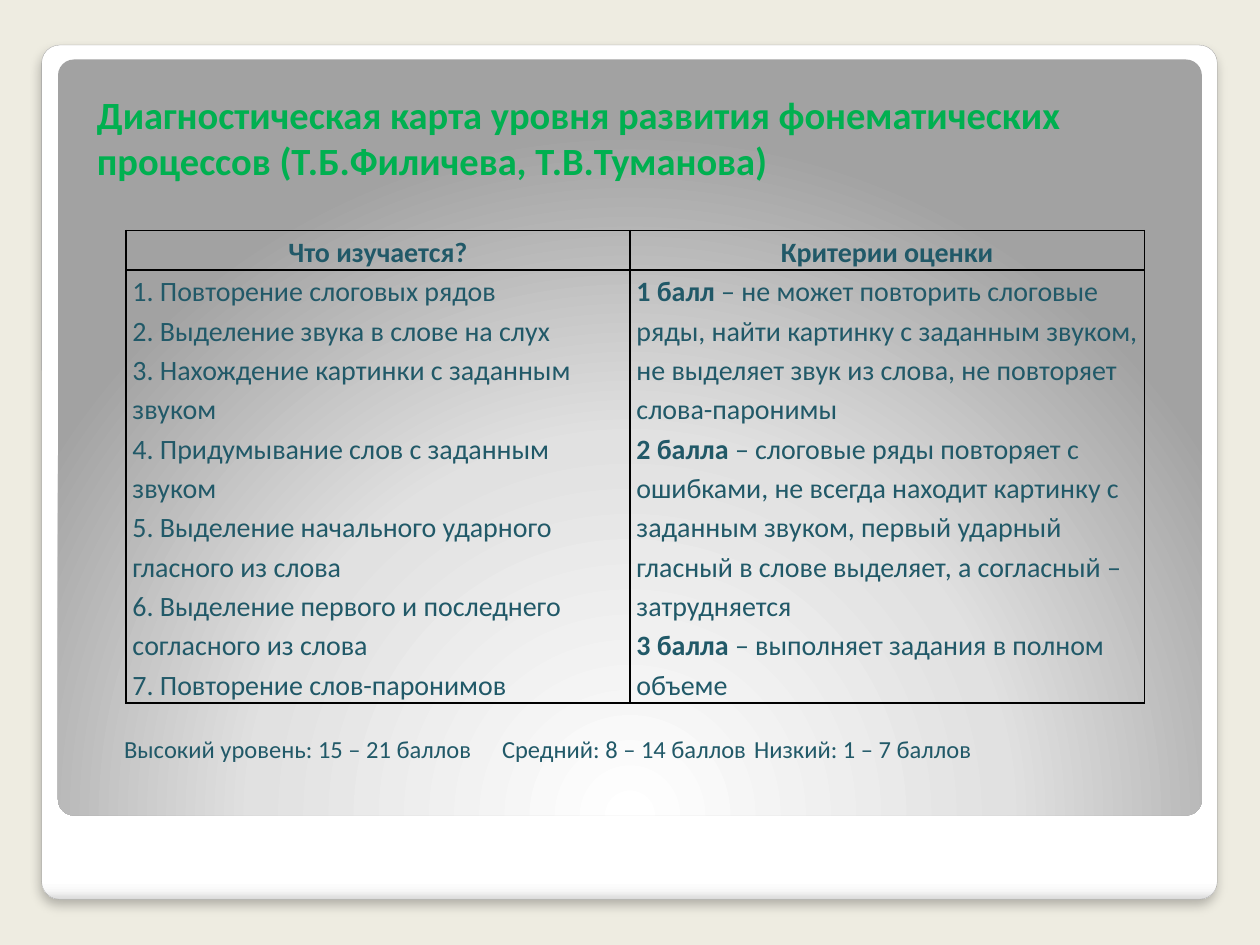
"""Build the slide with the diagnostic card of phonemic processes."""
from dataclasses import dataclass
from typing import Optional

from lxml.etree import SubElement
from pptx import Presentation
from pptx.dml.color import RGBColor
from pptx.enum.shapes import MSO_SHAPE
from pptx.enum.text import MSO_ANCHOR, MSO_AUTO_SIZE, PP_ALIGN
from pptx.oxml import parse_xml
from pptx.oxml.ns import nsdecls, qn
from pptx.util import Cm, Pt

FONT = "Calibri"
TEAL = "215968"
GREEN = "00B050"


@dataclass(frozen=True)
class Box:
    left: float
    top: float
    width: float
    height: float

    def lengths(self) -> tuple:
        return Cm(self.left), Cm(self.top), Cm(self.width), Cm(self.height)


@dataclass(frozen=True)
class Panel:
    box: Box
    stops: tuple
    direction: str
    line: Optional[str] = None
    shadow: bool = False


@dataclass(frozen=True)
class Entry:
    text: str
    lead: str = ""


@dataclass(frozen=True)
class Column:
    heading: str
    width: float
    entries: tuple


PANELS = (
    Panel(Box(0.84, 0.91, 23.7, 17.22),
          ((0, "FFFFFF"), (98, "FFFFFF"), (99, "F7F7F7"), (100, "DADADA")),
          '<a:lin ang="5400000" scaled="0"/>', "A4A4A4", True),
    Panel(Box(1.17, 1.2, 23.06, 15.24),
          ((0, "FFFFFF"), (55, "E1E1E1"), (100, "A2A2A2")),
          '<a:path path="circle"><a:fillToRect l="50000" t="175000" '
          'r="50000" b="-75000"/></a:path>'),
)
TITLE = ("Диагностическая карта уровня развития фонематических процессов "
         "(Т.Б.Филичева, Т.В.Туманова)")
COLUMNS = (
    Column("Что изучается?", 10.16, (
        Entry("1. Повторение слоговых рядов"),
        Entry("2. Выделение звука в слове на слух"),
        Entry("3. Нахождение картинки с заданным звуком"),
        Entry("4. Придумывание слов с заданным звуком"),
        Entry("5. Выделение начального ударного гласного из слова"),
        Entry("6. Выделение первого и последнего согласного из слова"),
        Entry("7. Повторение слов-паронимов"),
    )),
    Column("Критерии оценки", 10.37, (
        Entry(" – не может повторить слоговые ряды, найти картинку с заданным "
              "звуком, не выделяет звук из слова, не повторяет слова-паронимы",
              "1 балл"),
        Entry(" – слоговые ряды повторяет с ошибками, не всегда находит "
              "картинку с заданным звуком, первый ударный гласный в слове "
              "выделяет, а согласный – затрудняется", "2 балла"),
        Entry(" – выполняет задания в полном объеме", "3 балла"),
    )),
)
ROW_HEIGHTS = (0.79, 8.72)
LEVELS = ("Высокий уровень: 15 – 21 баллов", "Средний: 8 – 14 баллов",
          "Низкий: 1 – 7 баллов")
LEVEL_TABS = (9.24, 16.27)


def color(value: str) -> RGBColor:
    return RGBColor.from_string(value)


def format_run(run, size: float, fill: str, bold: bool = False) -> None:
    run.font.name = FONT
    run.font.size = Pt(size)
    run.font.bold = bold
    run.font.color.rgb = color(fill)


def add_panel(slide, panel: Panel, depth: int) -> None:
    shape = slide.shapes.add_shape(MSO_SHAPE.ROUNDED_RECTANGLE, *panel.box.lengths())
    shape.adjustments[0] = 0.021
    shape.shadow.inherit = False
    properties = shape.element.spPr
    stops = "".join(f'<a:gs pos="{position * 1000}"><a:srgbClr val="{value}"/></a:gs>'
                    for position, value in panel.stops)
    properties.insert(2, parse_xml(
        f'<a:gradFill {nsdecls("a")} rotWithShape="1"><a:gsLst>{stops}</a:gsLst>'
        f'{panel.direction}</a:gradFill>'))
    if panel.line:
        shape.line.color.rgb = color(panel.line)
        shape.line.width = Pt(0.16)
    else:
        shape.line.fill.background()
    if panel.shadow:
        properties.find(qn("a:effectLst")).append(parse_xml(
            f'<a:outerShdw {nsdecls("a")} blurRad="{Pt(6)}" dist="{Pt(4)}" dir="5400000" '
            'algn="t" rotWithShape="0"><a:srgbClr val="000000"><a:alpha val="25000"/>'
            '</a:srgbClr></a:outerShdw>'))
    slide.shapes.element.insert(2 + depth, shape.element)


def fill_placeholder(shape, box: Box, text: str, size: float, fill: str, bold: bool):
    shape.left, shape.top, shape.width, shape.height = box.lengths()
    frame = shape.text_frame
    frame.text = text
    frame.word_wrap = True
    frame.auto_size = MSO_AUTO_SIZE.NONE
    frame.vertical_anchor = MSO_ANCHOR.MIDDLE
    paragraph = frame.paragraphs[0]
    paragraph.alignment = PP_ALIGN.LEFT
    paragraph.space_before = Pt(0)
    for run in paragraph.runs:
        format_run(run, size, fill, bold)
    return frame


def add_levels(shape) -> None:
    frame = fill_placeholder(shape, Box(2.5, 14.65, 21, 0.9), "\t".join(LEVELS),
                             14, TEAL, False)
    frame.margin_left = frame.margin_right = 0
    properties = frame.paragraphs[0]._p.get_or_add_pPr()
    properties.set("marL", "0")
    properties.set("indent", "0")
    SubElement(properties, qn("a:buNone"))
    tabs = SubElement(properties, qn("a:tabLst"))
    for position in LEVEL_TABS:
        SubElement(tabs, qn("a:tab"), pos=str(Cm(position)), algn="l")


def fill_cell(cell, entries: tuple, alignment: PP_ALIGN) -> None:
    cell.margin_left = cell.margin_right = Cm(0.13)
    cell.margin_top = cell.margin_bottom = 0
    cell.fill.background()
    properties = cell._tc.get_or_add_tcPr()
    for index, side in enumerate("LRTB"):
        properties.insert(index, parse_xml(
            f'<a:ln{side} {nsdecls("a")} w="{Pt(1)}"><a:solidFill>'
            f'<a:srgbClr val="000000"/></a:solidFill></a:ln{side}>'))
    frame = cell.text_frame
    frame.text = "\n".join(entry.lead or entry.text for entry in entries)
    for paragraph, entry in zip(frame.paragraphs, entries):
        paragraph.alignment = alignment
        paragraph.line_spacing = 1.15
        format_run(paragraph.runs[0], 16, TEAL, bool(entry.lead))
        if entry.lead and entry.text:
            run = paragraph.add_run()
            run.text = entry.text
            format_run(run, 16, TEAL)


def add_criteria_table(slide) -> None:
    box = Box(2.54, 4.65, sum(column.width for column in COLUMNS), sum(ROW_HEIGHTS))
    table = slide.shapes.add_table(2, len(COLUMNS), *box.lengths()).table
    table.horz_banding = False
    for row, height in zip(table.rows, ROW_HEIGHTS):
        row.height = Cm(height)
    for index, column in enumerate(COLUMNS):
        table.columns[index].width = Cm(column.width)
        fill_cell(table.cell(0, index), (Entry("", column.heading),), PP_ALIGN.CENTER)
        fill_cell(table.cell(1, index), column.entries, PP_ALIGN.LEFT)


def main() -> None:
    presentation = Presentation()
    presentation.slide_width, presentation.slide_height = Cm(25.4), Cm(19.05)
    slide = presentation.slides.add_slide(presentation.slide_layouts[1])
    slide.background.fill.solid()
    slide.background.fill.fore_color.rgb = color("EEECE1")
    for depth, panel in enumerate(PANELS):
        add_panel(slide, panel, depth)
    fill_placeholder(slide.shapes.title, Box(1.7, 1.7, 20.75, 2.13), TITLE, 22, GREEN, True)
    add_criteria_table(slide)
    add_levels(slide.placeholders[1])
    presentation.save("out.pptx")


if __name__ == "__main__":
    main()
